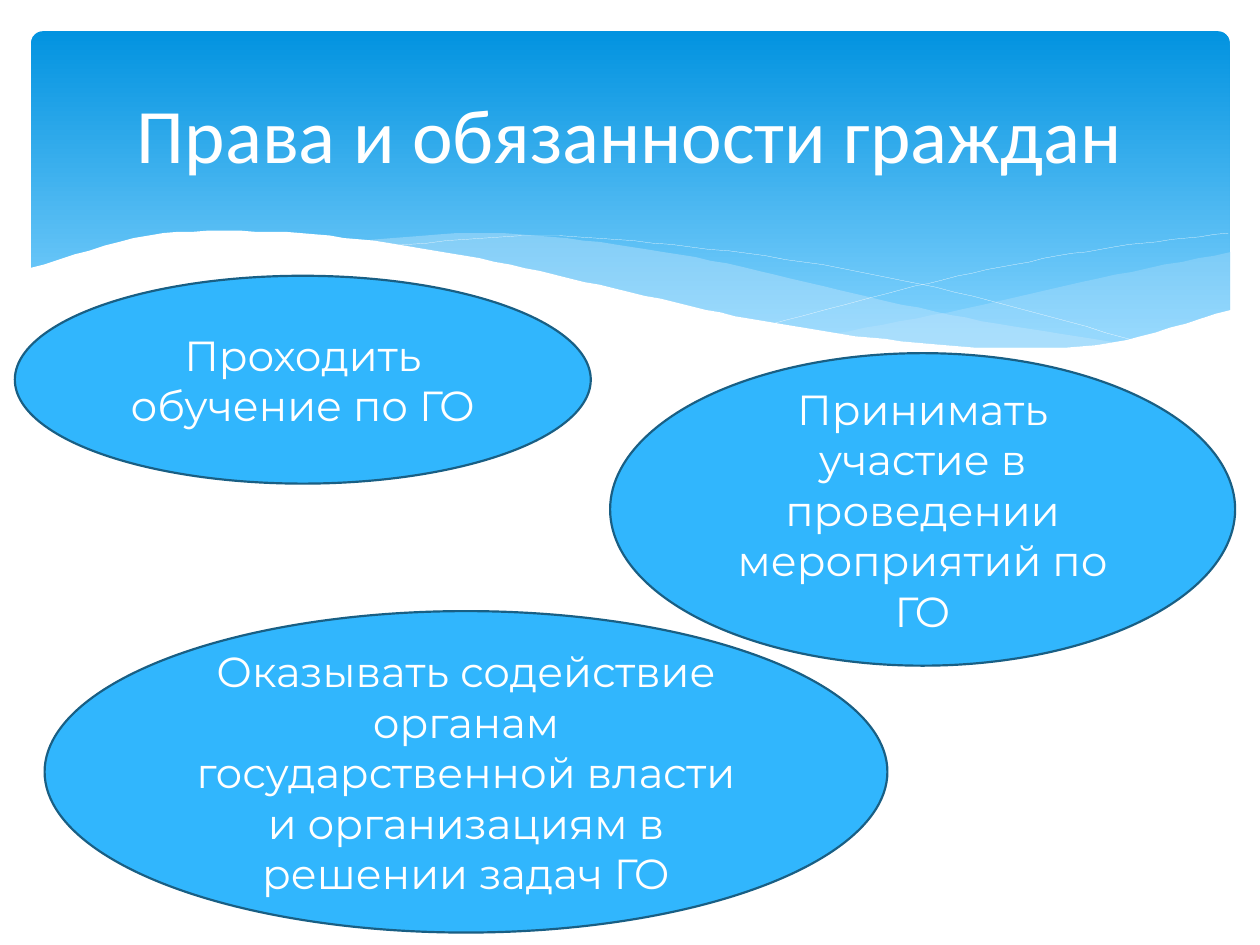
"""Build a slide on citizens' civil defence duties under a wavy blue banner."""
from lxml.etree import SubElement
from pptx import Presentation
from pptx.dml.color import RGBColor
from pptx.enum.shapes import MSO_SHAPE
from pptx.enum.text import MSO_ANCHOR, PP_ALIGN
from pptx.oxml.ns import qn
from pptx.util import Cm, Pt

WHITE, MIST, SKY, NAVY = "FFFFFF", "C6E7FC", "31B6FD", "195F84"
WAVE_UNIT = Cm(0.0254)
SAMPLES = 8


def paint(shape, fill=None, line=None, width=0.1, opacity=100):
    shape.shadow.inherit = False
    if fill:
        shape.fill.solid()
        shape.fill.fore_color.rgb = RGBColor.from_string(fill)
        if opacity < 100:
            tone = shape.fill._xPr.find(qn("a:solidFill"))[0]
            SubElement(tone, qn("a:alpha")).set("val", str(opacity * 1000))
    else:
        shape.fill.background()
    if line:
        shape.line.color.rgb = RGBColor.from_string(line)
        shape.line.width = Pt(width)
    else:
        shape.line.fill.background()


def write(shape, text, font, size):
    frame = shape.text_frame
    frame.word_wrap = True
    frame.vertical_anchor = MSO_ANCHOR.MIDDLE
    para = frame.paragraphs[0]
    para.alignment = PP_ALIGN.CENTER
    span = para.add_run()
    span.text = text
    span.font.name = font
    span.font.size = Pt(size)
    span.font.color.rgb = RGBColor.from_string(WHITE)


deck = Presentation()
deck.slide_width, deck.slide_height = Cm(25.4), Cm(19.05)
page = deck.slides.add_slide(deck.slide_layouts[6])

banner = page.shapes.add_shape(
    MSO_SHAPE.ROUNDED_RECTANGLE, Cm(0.63), Cm(0.63), Cm(24.16), Cm(6.86))
banner.adjustments[0] = 0.034
paint(banner)
banner.fill.gradient()
banner.fill.gradient_angle = 270
for stop, position, tone in zip(banner.fill.gradient_stops, (0, 0.9), ("0293E0", "83D3FE")):
    stop.position = position
    stop.color.rgb = RGBColor.from_string(tone)

wave_left, wave_right, wave_bottom = 23, 977, 329
evenly_spaced_heights = {
    "hill": (wave_left, wave_right, [213, 187, 184, 193, 210, 232, 253, 268, 276, 272, 246]),
    "right swell": (661, wave_right, [265, 245, 221, 200]),
    "long swell": (286, 893, [191, 185, 194, 212, 236, 257, 273]),
    "falling thread": (309, 907, [195, 187, 196, 213, 239, 272]),
    "rising thread": (613, 975, [257, 233, 212, 196, 185]),
}

curves = {}
for name, (left, right, heights) in evenly_spaced_heights.items():
    before = 2 * heights[0] - heights[1]
    after = 2 * heights[-1] - heights[-2]
    padded = [before, *heights, after]
    steps = (len(heights) - 1) * SAMPLES
    curve = []
    for step in range(steps):
        index, part = divmod(step, SAMPLES)
        t = part / SAMPLES
        a, b, c, d = padded[index:index + 4]
        # Catmull-Rom spline through the four neighbouring heights
        y = b + t / 2 * (c - a + t * (2 * a - 5 * b + 4 * c - d + t * (3 * b - a - 3 * c + d)))
        curve.append((left + (right - left) * step / steps, y))
    curves[name] = [*curve, (right, heights[-1])]

outlines = dict(curves)
outlines["hill"] = [*curves["hill"], (wave_right, wave_bottom), (wave_left, wave_bottom)]
for name in ("right swell", "long swell"):
    left, right, heights = evenly_spaced_heights[name]
    hill_below = [point for point in curves["hill"] if left <= point[0] <= right]
    outlines[name] = curves[name] + hill_below[::-1]

wave_looks = {
    "right swell": {"fill": MIST, "opacity": 29},
    "long swell": {"fill": MIST, "opacity": 40},
    "falling thread": {"line": WHITE},
    "rising thread": {"line": WHITE},
    "hill": {"fill": WHITE},
}
for name, look in wave_looks.items():
    start, *rest = outlines[name]
    builder = page.shapes.build_freeform(*start, scale=WAVE_UNIT)
    builder.add_line_segments(rest, close="fill" in look)
    paint(builder.convert_to_shape(), **look)

title = page.shapes.add_textbox(Cm(1.27), Cm(0.94), Cm(22.86), Cm(3.48))
write(title, "Права и обязанности граждан", "Calibri", 44)

duties = [
    ("Проходить обучение по ГО", 0.3, 5.56, 11.61, 4.19),
    ("Принимать участие в проведении мероприятий по ГО", 12.3, 7.12, 12.6, 6.3),
    ("Оказывать содействие органам государственной власти и организациям в решении задач ГО",
     0.9, 12.32, 16.99, 6.48),
]
for text, *place in duties:
    oval = page.shapes.add_shape(MSO_SHAPE.OVAL, *map(Cm, place))
    paint(oval, SKY, NAVY, 1.25)
    write(oval, text, "Montserrat", 24)

deck.save("out.pptx")
